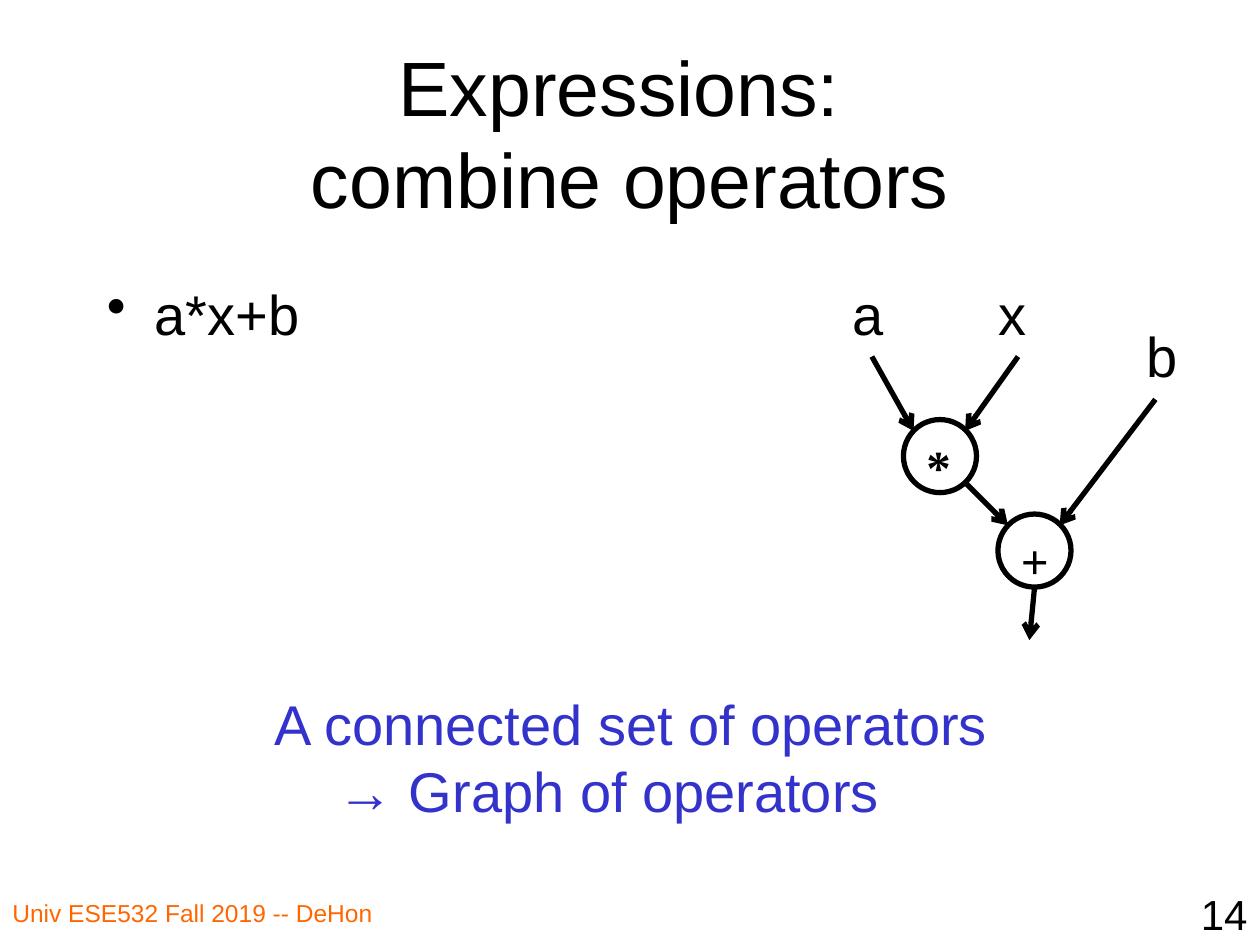
import pptx
import pptx.dml.color
import pptx.enum.shapes
import pptx.enum.text
import pptx.oxml
import pptx.oxml.ns
import pptx.util

Inches = pptx.util.Inches
Pt = pptx.util.Pt
ALIGN = pptx.enum.text.PP_ALIGN
ANCHOR = pptx.enum.text.MSO_ANCHOR

COLORS = {"ink": "000000", "accent": "3333CC", "footer": "FF6600"}
NODE_SIZE = 0.58
INPUTS = {"a": (6.67, 2.17), "x": (7.83, 2.17), "b": (9, 2.5)}
OPERATORS = {"*": (7.17, 3.33), "+": (7.92, 4.08)}
ARROWS = [
    ((7.66, 3.83), (8, 4.17)),
    ((9.17, 3.17), (8.41, 4.17)),
    ((6.92, 2.83), (7.25, 3.42)),
    ((8.08, 2.83), (7.66, 3.42)),
    ((8.21, 4.67), (8.17, 5.08)),
]


def color(name):
    return pptx.dml.color.RGBColor.from_string(COLORS[name])


def write_text(frame, text, size=32, fill="ink", font="Arial", bold=False,
               align=ALIGN.LEFT, anchor=ANCHOR.TOP, wrap=True):
    frame.word_wrap = wrap
    frame.vertical_anchor = anchor
    frame.text = text
    for para in frame.paragraphs:
        para.alignment = align
        for span in para.runs:
            span.font.size = Pt(size)
            span.font.name = font
            span.font.bold = bold
            span.font.color.rgb = color(fill)


def add_text(page, text, left, top, width, height, **style):
    box = page.shapes.add_textbox(*map(Inches, (left, top, width, height)))
    write_text(box.text_frame, text, **style)
    return box


def add_bullet(para, indent):
    properties = para._p.get_or_add_pPr()
    properties.set("marL", str(Inches(indent)))
    properties.set("indent", str(-Inches(indent)))
    bullet = pptx.oxml.ns.qn("a:buChar")
    properties.makeelement(bullet)
    properties.append(properties.makeelement(bullet, {"char": "•"}))


def add_operator(page, symbol, left, top):
    node = page.shapes.add_shape(
        pptx.enum.shapes.MSO_SHAPE.OVAL,
        *map(Inches, (left, top, NODE_SIZE, NODE_SIZE)))
    node.shadow.inherit = False
    node.fill.background()
    node.line.color.rgb = color("ink")
    node.line.width = Pt(3)
    write_text(node.text_frame, symbol, size=28, font="Times New Roman", bold=True)


def add_arrow(page, start, end):
    arrow = page.shapes.add_connector(
        pptx.enum.shapes.MSO_CONNECTOR.STRAIGHT, *map(Inches, start + end))
    arrow.line.color.rgb = color("ink")
    arrow.line.width = Pt(3)
    outline = arrow.line._get_or_add_ln()
    outline.append(outline.makeelement(
        pptx.oxml.ns.qn("a:tailEnd"), {"type": "arrow"}))
    properties = arrow._element.spPr
    properties.append(properties.makeelement(pptx.oxml.ns.qn("a:effectLst")))


def main():
    deck = pptx.Presentation()
    deck.slide_width = Inches(10)
    deck.slide_height = Inches(7.5)
    page = deck.slides.add_slide(deck.slide_layouts[6])

    add_text(page, "Univ ESE532 Fall 2019 -- DeHon", 0, 7.08, 3.83, 0.42,
             size=14, fill="footer")
    add_text(page, "14", 7.92, 7, 2.08, 0.5, size=24, align=ALIGN.RIGHT)
    add_text(page, "Expressions: \vcombine operators", 0.75, 0.42, 8.5, 1.25,
             size=44, align=ALIGN.CENTER, anchor=ANCHOR.MIDDLE)
    body = add_text(page, "a*x+b", 0.75, 2.17, 3.75, 4.5)
    add_bullet(body.text_frame.paragraphs[0], 0.38)
    add_text(page, "A connected set of operators\n\t→ Graph of operators",
             2.08, 5.42, 5.87, 1.17, fill="accent", wrap=False)

    for symbol, place in OPERATORS.items():
        add_operator(page, symbol, *place)
    for start, end in ARROWS:
        add_arrow(page, start, end)
    for name, place in INPUTS.items():
        add_text(page, name, *place, NODE_SIZE, 0.64)

    deck.save("out.pptx")


if __name__ == "__main__":
    main()
